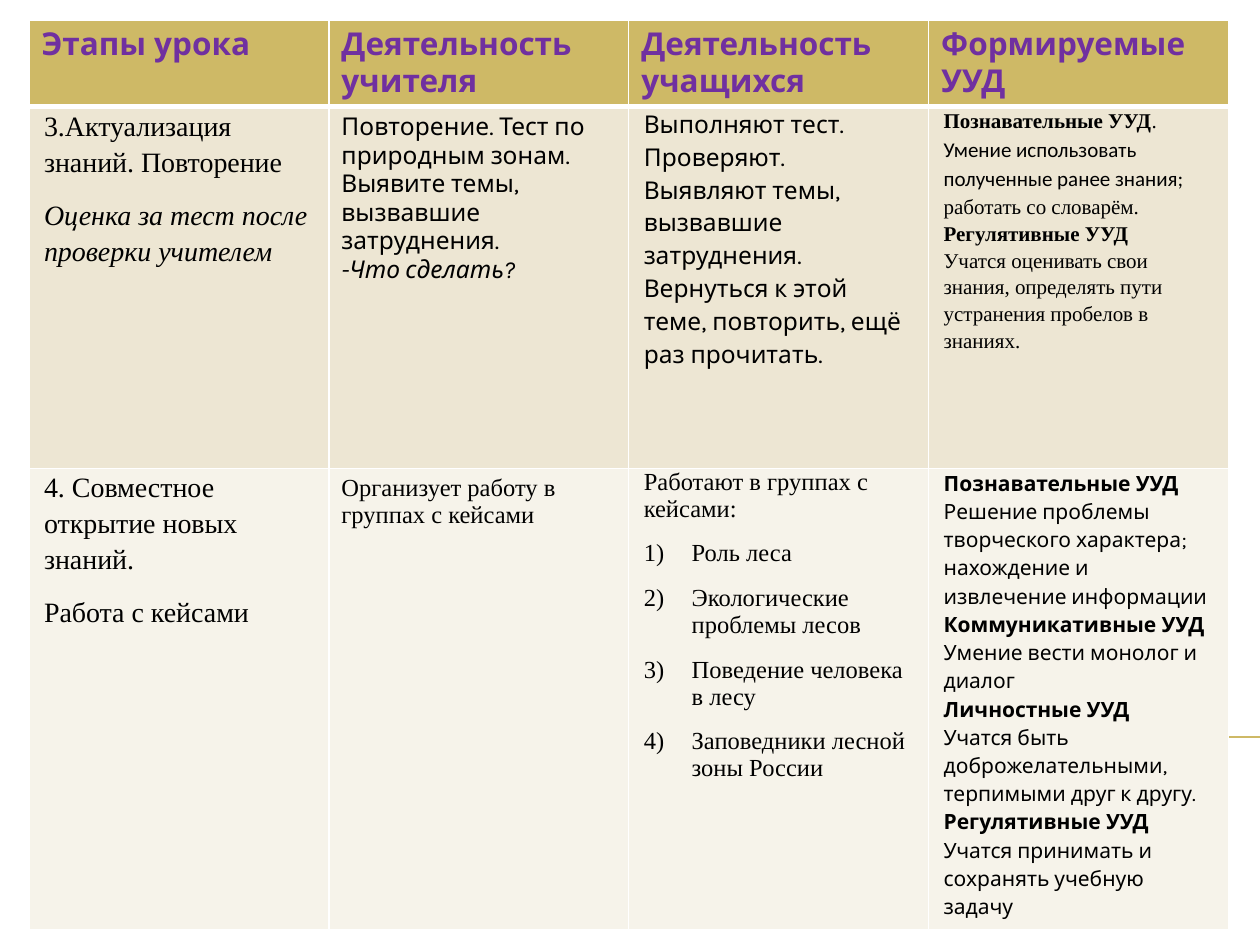
from copy import deepcopy

from lxml.etree import SubElement
from pptx import Presentation
from pptx.dml.color import RGBColor
from pptx.enum.shapes import MSO_CONNECTOR as CONNECTOR
from pptx.oxml.ns import qn
from pptx.util import Inches, Pt

COLORS = {
    "gold": "CEB966", "sand": "EDE6D3", "cream": "F6F3EA",
    "white": "FFFFFF", "purple": "7030A0", "black": "000000",
}
KARLA, TIMES, CALIBRI = "Karla", "Times New Roman", "Calibri"
COLUMN_WIDTH = 2.38
ROW_HEIGHTS = [0.68, 2.87, 3.66]
ROW_FILLS = ["gold", "sand", "cream"]
NARROW = {"margin_left": Inches(0.12), "margin_right": Inches(0.12),
          "margin_top": 0, "margin_bottom": 0}
SPACED = {"line_spacing": 1.15, "space_after": Pt(10)}
AFTER = {"space_after": Pt(10)}


def run(text, size, name, **format_values):
    return text, {"size": Pt(size), "name": name, "bold": False, **format_values}


def paragraph_of(*lines, layout=None, numbered=False):
    return {"lines": lines, "layout": layout or {}, "numbered": numbered}


def cell_of(*paragraphs, margins=None):
    return {"paragraphs": paragraphs, "margins": margins or {}}


def header(text):
    return cell_of(paragraph_of([run(text, 18, KARLA, bold=True)]))


def stage(*entries):
    return cell_of(*[
        paragraph_of([run(text, 16, TIMES, italic=italic)], layout=SPACED)
        for text, italic in entries
    ], margins=NARROW)


def skills(*lines):
    return cell_of(paragraph_of(*lines, layout=SPACED), margins=NARROW)


def skill_pairs(*pairs):
    lines = []
    for heading, detail in pairs:
        lines += [[run(heading, 12, KARLA, bold=True)], [run(detail, 12, KARLA)]]
    return skills(*lines)


CASES = ["Роль леса", "Экологические проблемы лесов",
         "Поведение человека в лесу", "Заповедники лесной зоны России"]

ROWS = [
    [header(text) for text in ("Этапы урока", "Деятельность учителя",
                               "Деятельность учащихся", "Формируемые УУД")],
    [
        stage(("3.Актуализация знаний. Повторение", False),
              ("Оценка за тест после проверки учителем", True)),
        cell_of(
            paragraph_of([run("Повторение. Тест по природным зонам. Выявите темы, "
                              "вызвавшие затруднения.", 14, KARLA)]),
            paragraph_of([run("-Что сделать?", 14, KARLA, italic=True)])),
        cell_of(paragraph_of(
            [run("Выполняют тест. Проверяют. Выявляют темы, вызвавшие затруднения. "
                 "Вернуться к этой теме, повторить, ещё раз прочитать.", 14, KARLA)],
            layout=SPACED), margins=NARROW),
        skills(
            [run("Познавательные УУД", 12, TIMES, bold=True), run(".", 12, TIMES)],
            [run("Умение использовать полученные ранее знания; ", 12, CALIBRI),
             run("работать со словарём.", 12, TIMES)],
            [run("Регулятивные УУД", 12, TIMES, bold=True)],
            [run("Учатся оценивать свои знания, определять пути устранения "
                 "пробелов в знаниях.", 12, TIMES)]),
    ],
    [
        stage(("4. Совместное открытие новых знаний.", False),
              ("Работа с кейсами", False)),
        cell_of(paragraph_of([run("Организует работу в группах с кейсами", 14, TIMES)])),
        cell_of(
            paragraph_of([run("Работают в группах с кейсами:", 14, TIMES)], layout=AFTER),
            *[paragraph_of([run(case, 14, TIMES)], layout=AFTER, numbered=True)
              for case in CASES],
            margins=NARROW),
        skill_pairs(
            ("Познавательные УУД", "Решение проблемы творческого характера; "
                                   "нахождение и извлечение информации"),
            ("Коммуникативные УУД", "Умение вести монолог и диалог"),
            ("Личностные УУД", "Учатся быть доброжелательными, терпимыми друг к другу."),
            ("Регулятивные УУД", "Учатся принимать и сохранять учебную задачу")),
    ],
]


def set_attributes(target, values):
    for name, value in values.items():
        setattr(target, name, value)


def number_paragraph(paragraph):
    properties = paragraph._p.get_or_add_pPr()
    properties.set("marL", str(Inches(0.38)))
    properties.set("indent", str(-Inches(0.38)))
    SubElement(properties, qn("a:buFont"), typeface="+mj-lt")
    SubElement(properties, qn("a:buAutoNum"), type="arabicParenR")


def fill_paragraph(paragraph, content, color):
    set_attributes(paragraph, content["layout"])
    if content["numbered"]:
        number_paragraph(paragraph)
    for index, line in enumerate(content["lines"]):
        if index:
            previous = paragraph.runs[-1]
            paragraph.add_line_break()
            paragraph._p[-1].append(deepcopy(previous._r.rPr))
        for text, format_values in line:
            text_run = paragraph.add_run()
            text_run.text = text
            set_attributes(text_run.font, format_values)
            text_run.font.color.rgb = RGBColor.from_string(COLORS[color])


def set_borders(cell, bottom, top):
    properties = cell._tc.get_or_add_tcPr()
    widths = {"lnL": 1, "lnR": 1, "lnT": top, "lnB": bottom}
    for index, (tag, width) in enumerate(widths.items()):
        border = SubElement(properties, qn(f"a:{tag}"), w=str(Pt(width)))
        fill = SubElement(border, qn("a:solidFill"))
        SubElement(fill, qn("a:srgbClr"), val=COLORS["white"])
        properties.insert(index, border)


def add_rule(slide, left, top, width):
    rule = slide.shapes.add_connector(
        CONNECTOR.STRAIGHT, Inches(left), Inches(top), Inches(left + width), Inches(top))
    rule.line.color.rgb = RGBColor.from_string(COLORS["gold"])
    rule.line.width = Pt(0.75)
    SubElement(rule._element.spPr, qn("a:effectLst"))


def add_lesson_table(slide, left, top):
    columns = len(ROWS[0])
    table = slide.shapes.add_table(
        len(ROWS), columns, Inches(left), Inches(top),
        Inches(COLUMN_WIDTH * columns), Inches(sum(ROW_HEIGHTS))).table
    for column in table.columns:
        column.width = Inches(COLUMN_WIDTH)
    for row_index, row in enumerate(ROWS):
        table.rows[row_index].height = Inches(ROW_HEIGHTS[row_index])
        for column_index, content in enumerate(row):
            cell = table.cell(row_index, column_index)
            set_attributes(cell, content["margins"])
            cell.fill.solid()
            cell.fill.fore_color.rgb = RGBColor.from_string(COLORS[ROW_FILLS[row_index]])
            set_borders(cell, bottom=1 if row_index else 3, top=3 if row_index == 1 else 1)
            frame = cell.text_frame
            for index, paragraph_content in enumerate(content["paragraphs"]):
                paragraph = frame.add_paragraph() if index else frame.paragraphs[0]
                fill_paragraph(paragraph, paragraph_content,
                               "black" if row_index else "purple")


def main():
    presentation = Presentation()
    presentation.slide_width = Inches(10)
    presentation.slide_height = Inches(7.5)
    slide = presentation.slides.add_slide(presentation.slide_layouts[6])
    add_rule(slide, 0.56, 5.85, 9.44)
    add_lesson_table(slide, 0.23, 0.16)
    presentation.save("out.pptx")


if __name__ == "__main__":
    main()
